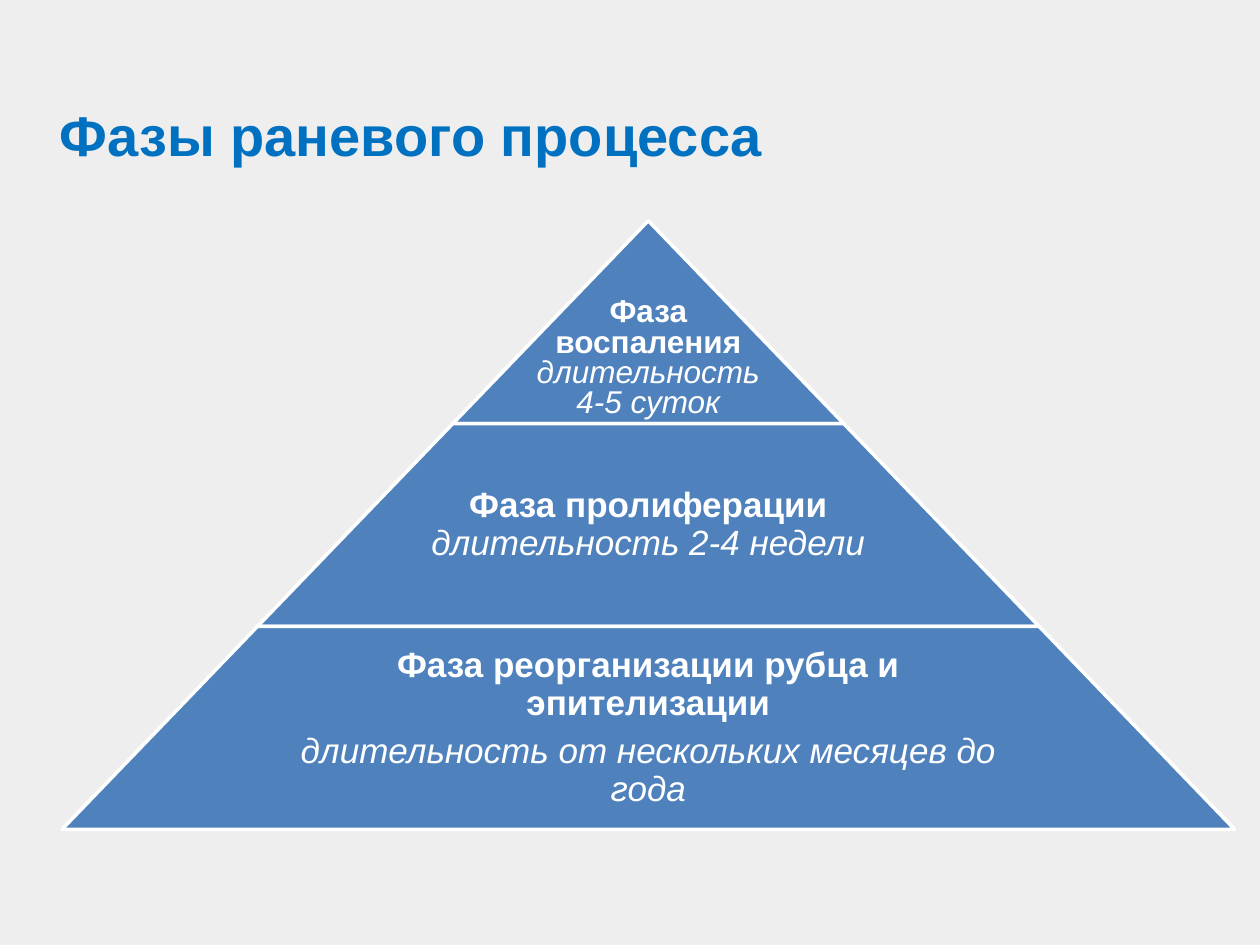
from pptx import Presentation
from pptx.dml.color import RGBColor
from pptx.enum.shapes import MSO_SHAPE as Shape
from pptx.enum.text import MSO_ANCHOR as Anchor, PP_ALIGN as Align
from pptx.util import Cm, Pt

BACKGROUND = RGBColor(0xEE, 0xEE, 0xEE)
TITLE_BLUE = RGBColor(0x00, 0x70, 0xC0)
TIER_BLUE = RGBColor(0x4F, 0x81, 0xBD)
WHITE = RGBColor(0xFF, 0xFF, 0xFF)

CENTER_X, PYRAMID_TOP = 13.07, 4.45
TIER_HEIGHT, WIDTH_STEP = 4.09, 7.88

NAME = {"bold": True}
DURATION = {"bold": False, "italic": True}

# Each tier holds paragraphs, and each paragraph holds (text, style) runs.
TIERS = [
    {"size": 18, "spacing": 0.8, "after": 0, "anchor": Anchor.BOTTOM, "share": 1,
     "paragraphs": [
         [("Фаза", NAME)],
         [("воспаления ", NAME), ("длительность", DURATION)],
         [("4-5 суток", DURATION)]]},
    {"size": 20, "spacing": 0.9, "after": 6, "anchor": Anchor.MIDDLE, "share": 0.65,
     "paragraphs": [
         [("Фаза пролиферации ", NAME), ("длительность 2-4 недели", DURATION)]]},
    {"size": 20, "spacing": 0.9, "after": 6, "anchor": Anchor.MIDDLE, "share": 0.65,
     "paragraphs": [
         [("Фаза реорганизации рубца и эпителизации", NAME)],
         [("длительность от нескольких месяцев до года", DURATION)]]},
]


def apply_format(target, values):
    for name, value in values.items():
        setattr(target, name, value)


def add_run(p, text, size, color, style):
    r = p.add_run()
    r.text = text
    apply_format(r.font, {"name": "Arial", "size": Pt(size), **style})
    r.font.color.rgb = color


def set_title(slide, text):
    sp = slide.shapes.title
    apply_format(sp, {"left": Cm(0.64), "top": Cm(0.33),
                      "width": Cm(22.86), "height": Cm(3.18)})
    tf = sp.text_frame
    apply_format(tf, {"vertical_anchor": Anchor.BOTTOM, "margin_left": Cm(0.56)})
    p = tf.paragraphs[0]
    p.alignment = Align.LEFT
    add_run(p, text, 32, TITLE_BLUE, NAME)


def tier_box(index, share=1):
    """Return the centred box of a tier, narrowed to a share of its width."""
    width = WIDTH_STEP * (index + 1) * share
    top = PYRAMID_TOP + index * TIER_HEIGHT
    return Cm(CENTER_X - width / 2), Cm(top), Cm(width), Cm(TIER_HEIGHT)


def add_tier_shape(slide, index):
    sp = slide.shapes.add_shape(Shape.TRAPEZOID, *tier_box(index))
    sp.adjustments[0] = WIDTH_STEP / 2 / TIER_HEIGHT
    sp.shadow.inherit = False
    sp.fill.solid()
    sp.fill.fore_color.rgb = TIER_BLUE
    sp.line.color.rgb = WHITE
    sp.line.width = Pt(2)


def add_tier_text(slide, index, tier):
    tf = slide.shapes.add_textbox(*tier_box(index, tier["share"])).text_frame
    margins = {f"margin_{side}": Cm(0.08) for side in ("left", "top", "right", "bottom")}
    apply_format(tf, {"word_wrap": True, "vertical_anchor": tier["anchor"], **margins})
    for i, runs in enumerate(tier["paragraphs"]):
        p = tf.add_paragraph() if i else tf.paragraphs[0]
        apply_format(p, {"alignment": Align.CENTER, "line_spacing": tier["spacing"],
                         "space_after": Pt(tier["after"])})
        for text, style in runs:
            add_run(p, text, tier["size"], WHITE, style)


def main():
    prs = Presentation()
    prs.slide_width, prs.slide_height = Cm(25.4), Cm(19.05)
    slide = prs.slides.add_slide(prs.slide_layouts[5])
    slide.background.fill.solid()
    slide.background.fill.fore_color.rgb = BACKGROUND
    set_title(slide, "Фазы раневого процесса")
    for index, tier in enumerate(TIERS):
        add_tier_shape(slide, index)
        add_tier_text(slide, index, tier)
    prs.save("out.pptx")


if __name__ == "__main__":
    main()
